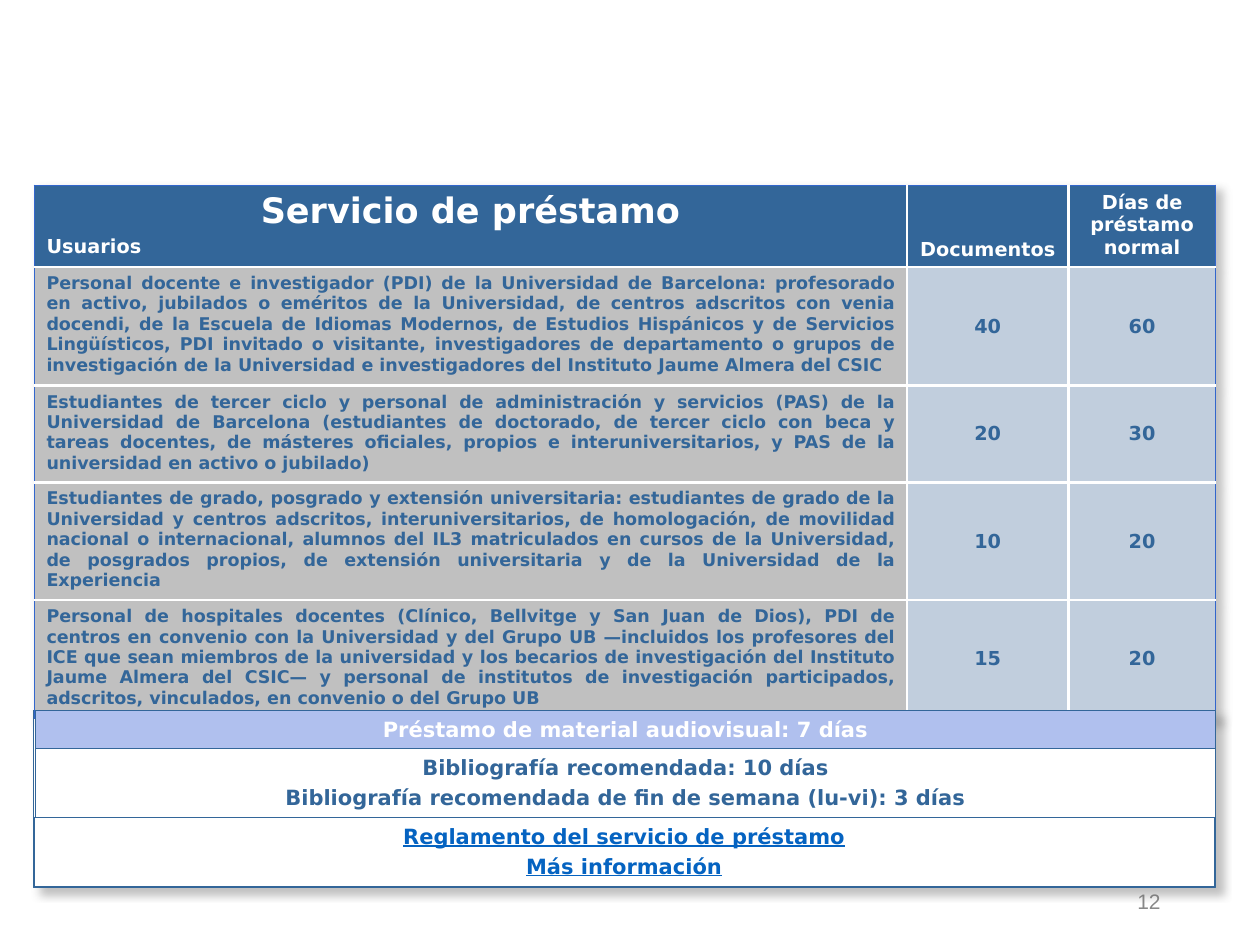
"""Build the library loan service slide: loan table, notice boxes and page number."""
from dataclasses import dataclass
from typing import Any

from lxml import etree
from pptx import Presentation
from pptx import util as u
from pptx.dml.color import RGBColor
from pptx.enum import shapes, text
from pptx.oxml import parse_xml
from pptx.oxml.ns import nsdecls, qn

BLUE = RGBColor(0x33, 0x66, 0x99)
EDGE = RGBColor(0x33, 0x66, 0xCC)
WHITE = RGBColor(0xFF, 0xFF, 0xFF)
GREY = RGBColor(0xC0, 0xC0, 0xC0)
PALE = RGBColor(0xC1, 0xCE, 0xDD)
LILAC = RGBColor(0xB0, 0xC0, 0xEE)
LINK = RGBColor(0x05, 0x63, 0xC1)
MUTED = RGBColor(0x89, 0x89, 0x89)
SHADOW = RGBColor(0x64, 0x64, 0x64)

CENTER, LEFT = text.PP_ALIGN.CENTER, text.PP_ALIGN.LEFT
JUSTIFY, RIGHT = text.PP_ALIGN.JUSTIFY, text.PP_ALIGN.RIGHT
TOP, MIDDLE, BOTTOM = text.MSO_ANCHOR.TOP, text.MSO_ANCHOR.MIDDLE, text.MSO_ANCHOR.BOTTOM
BOLD = {"name": "DejaVu Sans", "bold": True}


@dataclass(frozen=True)
class Line:
    text: str
    size: float
    color: RGBColor
    align: Any = CENTER
    before: float = 0


@dataclass(frozen=True)
class Cell:
    lines: tuple[Line, ...]
    fill: RGBColor
    anchor: Any


@dataclass(frozen=True)
class Box:
    left: float
    top: float
    width: float
    height: float
    fill: RGBColor | None = None
    border: float = 0.5
    lines: tuple[Line, ...] = ()
    underline: bool = False


@dataclass(frozen=True)
class Loan:
    users: str
    documents: int
    days: int


LOANS = (
    Loan("Personal docente e investigador (PDI) de la Universidad de Barcelona: profesorado en activo, "
         "jubilados o eméritos de la Universidad, de centros adscritos con venia docendi, de la Escuela "
         "de Idiomas Modernos, de Estudios Hispánicos y de Servicios Lingüísticos, PDI invitado o "
         "visitante, investigadores de departamento o grupos de investigación de la Universidad e "
         "investigadores del Instituto Jaume Almera del CSIC", 40, 60),
    Loan("Estudiantes de tercer ciclo y personal de administración y servicios (PAS) de la Universidad "
         "de Barcelona (estudiantes de doctorado, de tercer ciclo con beca y tareas docentes, de "
         "másteres oficiales, propios e interuniversitarios, y PAS de la universidad en activo o "
         "jubilado)", 20, 30),
    Loan("Estudiantes de grado, posgrado y extensión universitaria: estudiantes de grado de la "
         "Universidad y centros adscritos, interuniversitarios, de homologación, de movilidad nacional "
         "o internacional, alumnos del IL3 matriculados en cursos de la Universidad, de posgrados "
         "propios, de extensión universitaria y de la Universidad de la Experiencia", 10, 20),
    Loan("Personal de hospitales docentes (Clínico, Bellvitge y San Juan de Dios), PDI de centros en "
         "convenio con la Universidad y del Grupo UB —incluidos los profesores del ICE que sean "
         "miembros de la universidad y los becarios de investigación del Instituto Jaume Almera del "
         "CSIC— y personal de institutos de investigación participados, adscritos, vinculados, en "
         "convenio o del Grupo UB", 15, 20),
)
HEADER = (
    Cell((Line("Servicio de préstamo", 20, WHITE), Line("Usuarios", 11, WHITE, LEFT, 2.2)), BLUE, TOP),
    Cell((Line("Documentos", 11, WHITE),), BLUE, BOTTOM),
    Cell((Line("Días de préstamo normal", 11, WHITE),), BLUE, TOP),
)
COLUMNS = (499, 92.2, 84.2)
ROWS = (46.8, 67.7, 55.4, 57.6, 67)
PANEL = Box(19.4, 406.1, 675.4, 100.8, WHITE)
NOTICES = (
    Box(20.2, 406.1, 674.6, 21.6, LILAC,
        lines=(Line("Préstamo de material audiovisual: 7 días", 12, WHITE),)),
    Box(20.2, 427.7, 674.6, 39.6, lines=(
        Line("Bibliografía recomendada: 10 días", 12, BLUE),
        Line("Bibliografía recomendada de fin de semana (lu-vi): 3 días", 12, BLUE, before=2.4))),
    Box(19.4, 467.3, 674.6, 39.6, border=0.75, underline=True, lines=(
        Line("Reglamento del servicio de préstamo", 12, LINK),
        Line("Más información", 12, LINK, before=2.4))),
)


def effects() -> Any:
    """Return an effect list holding the soft outer shadow."""
    return parse_xml(
        f'<a:effectLst {nsdecls("a")}><a:outerShdw blurRad="{u.Pt(5)}" dist="{u.Pt(5)}" '
        f'dir="2700000" algn="tl" rotWithShape="0"><a:srgbClr val="{SHADOW}">'
        '<a:alpha val="40000"/></a:srgbClr></a:outerShdw></a:effectLst>')


def write(tf: Any, lines: tuple[Line, ...], style: dict[str, Any]) -> None:
    """Write styled lines as the paragraphs of a text frame."""
    for i, line in enumerate(lines):
        p = tf.add_paragraph() if i else tf.paragraphs[0]
        p.alignment = line.align
        if i:
            p.space_before = u.Pt(line.before)
        r = p.add_run()
        r.text = line.text
        r.font.color.rgb = line.color
        for key, value in {**style, "size": u.Pt(line.size)}.items():
            setattr(r.font, key, value)


def draw_box(s: Any, box: Box) -> Any:
    """Draw a bordered rectangle with its text."""
    frame = map(u.Pt, (box.left, box.top, box.width, box.height))
    sp = s.shapes.add_shape(shapes.MSO_SHAPE.RECTANGLE, *frame)
    sp.shadow.inherit = False
    if box.fill is None:
        sp.fill.background()
    else:
        sp.fill.solid()
        sp.fill.fore_color.rgb = box.fill
    sp.line.color.rgb = BLUE
    sp.line.width = u.Pt(box.border)
    tf = sp.text_frame
    for key, value in {"word_wrap": True, "vertical_anchor": TOP}.items():
        setattr(tf, key, value)
    if box.lines:
        tf.auto_size = text.MSO_AUTO_SIZE.SHAPE_TO_FIT_TEXT
        write(tf, box.lines, {**BOLD, "underline": box.underline})
    return sp


def draw_border(cell: Any, side: str, outer: bool) -> None:
    """Add one cell border, thin blue outside and white inside."""
    color, width = (EDGE, 0.5) if outer else (WHITE, 1.5)
    ln = etree.SubElement(cell._tc.get_or_add_tcPr(), qn(f"a:ln{side}"), w=str(u.Pt(width)))
    etree.SubElement(etree.SubElement(ln, qn("a:solidFill")), qn("a:srgbClr"), val=str(color))


def draw_table(s: Any, grid: list[tuple[Cell, ...]]) -> None:
    """Draw the loan table with its borders and shadow."""
    frame = map(u.Pt, (19.4, 105.8, sum(COLUMNS), sum(ROWS)))
    table = s.shapes.add_table(len(ROWS), len(COLUMNS), *frame).table
    for key in ("first_row", "horz_banding"):
        setattr(table, key, False)
    table._tbl.tblPr.insert(0, effects())
    for column, width in zip(table.columns, COLUMNS):
        column.width = u.Pt(width)
    for i, (row, height) in enumerate(zip(table.rows, ROWS)):
        row.height = u.Pt(height)
        for j, (cell, item) in enumerate(zip(row.cells, grid[i])):
            sides = {"L": j == 0, "R": j == len(COLUMNS) - 1, "T": i == 0, "B": i == len(ROWS) - 1}
            for side, outer in sides.items():
                draw_border(cell, side, outer)
            cell.fill.solid()
            cell.fill.fore_color.rgb = item.fill
            cell.vertical_anchor = item.anchor
            write(cell.text_frame, item.lines, BOLD)


def loan_row(loan: Loan) -> tuple[Cell, ...]:
    """Return the cells of one user group."""
    users = Cell((Line(loan.users, 10, BLUE, JUSTIFY),), GREY, TOP)
    limits = (Cell((Line(str(n), 11, BLUE),), PALE, MIDDLE) for n in (loan.documents, loan.days))
    return users, *limits


def main() -> None:
    """Build and save the slide."""
    prs = Presentation()
    prs.slide_width, prs.slide_height = u.Pt(720), u.Pt(540)
    s = prs.slides.add_slide(prs.slide_layouts[6])
    tf = s.shapes.add_textbox(*map(u.Pt, (508.3, 500.4, 162, 28.8))).text_frame
    for key, value in {"word_wrap": True, "vertical_anchor": MIDDLE}.items():
        setattr(tf, key, value)
    write(tf, (Line("12", 12, MUTED, RIGHT),), {"name": "Arial"})
    panel = draw_box(s, PANEL)
    sp_pr = panel._element.spPr
    sp_pr.replace(sp_pr.find(qn("a:effectLst")), effects())
    draw_table(s, [HEADER, *map(loan_row, LOANS)])
    for notice in NOTICES:
        draw_box(s, notice)
    prs.save("out.pptx")


if __name__ == "__main__":
    main()
